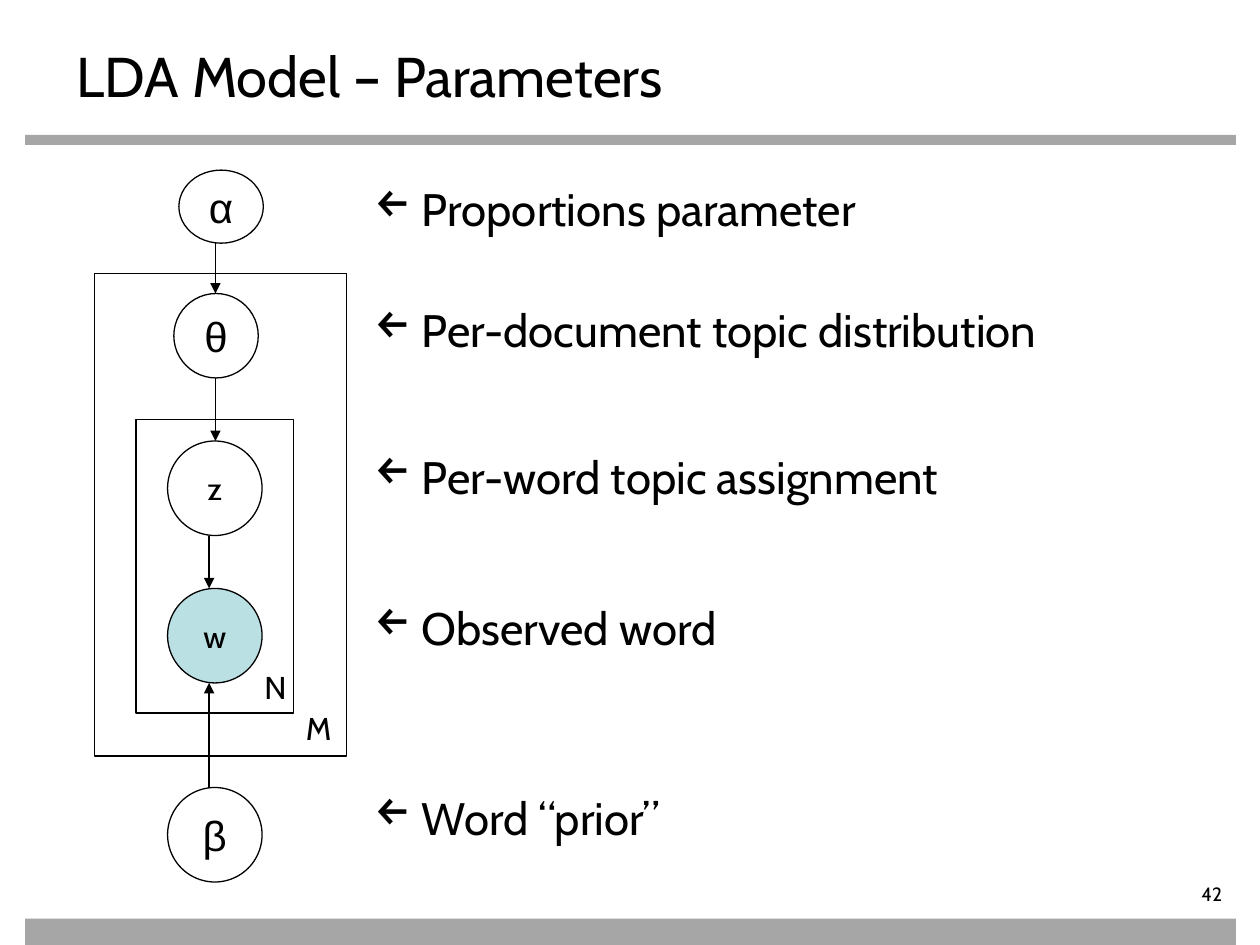
from lxml import etree
from pptx import Presentation
from pptx.dml.color import RGBColor
from pptx.enum import shapes, text
from pptx.oxml import ns
from pptx.util import Inches, Pt

COLORS = {"ink": "000000", "bar": "A6A6A6", "observed": "BBE0E3"}
FONT, GREEK_FONT = "Cabin", "Arial"


def color(name):
    return RGBColor.from_string(COLORS[name])


def set_font(paragraph, size, name=FONT):
    paragraph.font.size = Pt(size)
    paragraph.font.name = name
    paragraph.font.color.rgb = color("ink")


def add_box(slide, kind, box, fill=None, outlined=True):
    shape = slide.shapes.add_shape(kind, *map(Inches, box))
    shape.shadow.inherit = False
    if fill:
        shape.fill.solid()
        shape.fill.fore_color.rgb = color(fill)
    else:
        shape.fill.background()
    if outlined:
        shape.line.color.rgb = color("ink")
        shape.line.width = Pt(0.75)
    else:
        shape.line.fill.background()
    return shape


def add_label(slide, box, words, size):
    frame = slide.shapes.add_textbox(*map(Inches, box)).text_frame
    frame.word_wrap = True
    paragraph = frame.paragraphs[0]
    paragraph.text = words
    set_font(paragraph, size)
    return frame


def add_node(slide, box, symbol, size=18, font=FONT, fill=None):
    frame = add_box(slide, shapes.MSO_SHAPE.OVAL, box, fill).text_frame
    frame.word_wrap = False
    frame.vertical_anchor = text.MSO_ANCHOR.MIDDLE
    paragraph = frame.paragraphs[0]
    paragraph.text = symbol
    paragraph.alignment = text.PP_ALIGN.CENTER
    set_font(paragraph, size, font)


def add_arrow(slide, x, start, end):
    arrow = slide.shapes.add_connector(
        shapes.MSO_CONNECTOR.STRAIGHT, Inches(x), Inches(start), Inches(x), Inches(end))
    arrow.line.color.rgb = color("ink")
    arrow.line.width = Pt(0.75)
    properties = arrow.element.spPr
    line = properties.find(ns.qn("a:ln"))
    etree.SubElement(line, ns.qn("a:tailEnd"), type="triangle")
    etree.SubElement(properties, ns.qn("a:effectLst"))


def add_title(slide, box, words):
    title = slide.shapes.title
    title.left, title.top, title.width, title.height = map(Inches, box)
    title.text_frame.vertical_anchor = text.MSO_ANCHOR.TOP
    paragraph = title.text_frame.paragraphs[0]
    paragraph.text = words
    paragraph.alignment = text.PP_ALIGN.LEFT
    set_font(paragraph, 32)


def add_frame(slide, left, width, page):
    # Bars under the title and along the bottom, with the page number
    for top, height in ((1.07, 0.08), (7.29, 0.21)):
        add_box(slide, shapes.MSO_SHAPE.RECTANGLE, (left, top, width, height),
                "bar", outlined=False)
    frame = add_label(slide, (8.7, 7, 1.1, 0.22), page, 11)
    frame.margin_left = frame.margin_top = frame.margin_bottom = 0
    frame.paragraphs[0].alignment = text.PP_ALIGN.RIGHT


def add_descriptions(slide, box):
    # Each line is spaced to sit beside its node
    lines = (
        ("Proportions parameter", 0),
        ("Per-document topic distribution", 38),
        ("Per-word topic assignment", 52.5),
        ("Observed word", 55),
        ("Word “prior”", 77.5),
    )
    frame = slide.shapes.add_textbox(*map(Inches, box)).text_frame
    frame.word_wrap = True
    for index, (words, gap) in enumerate(lines):
        paragraph = frame.add_paragraph() if index else frame.paragraphs[0]
        paragraph.text = words
        properties = paragraph._p.get_or_add_pPr()
        properties.set("marL", str(Inches(0.38)))
        properties.set("indent", str(Inches(-0.38)))
        etree.SubElement(properties, ns.qn("a:buChar"), char="←")
        if gap:
            paragraph.space_before = Pt(gap)
        set_font(paragraph, 26)


def add_plate_diagram(slide, left, top):
    # Plates for documents (M) and words (N)
    for x, y, width, height in ((0, 0.82, 2, 3.83), (0.33, 1.98, 1.25, 2.33)):
        add_box(slide, shapes.MSO_SHAPE.RECTANGLE, (left + x, top + y, width, height))
    for name, x, y in (("M", 1.58, 4.23), ("N", 1.25, 3.9)):
        add_label(slide, (left + x, top + y, 0.33, 0.4), name, 18)

    # Variables, with the observed one filled
    add_node(slide, (left + 0.67, top, 0.67, 0.58), "α", 24, GREEK_FONT)
    add_node(slide, (left + 0.63, top + 0.98, 0.67, 0.67), "θ", 24, GREEK_FONT)
    add_node(slide, (left + 0.58, top + 2.15, 0.75, 0.75), "z")
    add_node(slide, (left + 0.58, top + 3.32, 0.75, 0.75), "w", fill="observed")
    add_node(slide, (left + 0.58, top + 4.9, 0.75, 0.75), "β", 24, GREEK_FONT)

    # Dependencies between variables
    for x, start, end in ((0.96, 0.58, 0.98), (0.96, 1.65, 2.15),
                          (0.91, 2.9, 3.32), (0.91, 4.9, 4.07)):
        add_arrow(slide, left + x, top + start, top + end)


def main():
    presentation = Presentation()
    presentation.slide_width, presentation.slide_height = Inches(10), Inches(7.5)
    slide = presentation.slides.add_slide(presentation.slide_layouts[5])
    add_frame(slide, 0.2, 9.61, "42")
    add_title(slide, (0.51, 0.28, 9, 0.55), "LDA Model – Parameters")
    add_descriptions(slide, (2.87, 1.39, 6, 5.43))
    add_plate_diagram(slide, 0.75, 1.35)
    presentation.save("out.pptx")


if __name__ == "__main__":
    main()
